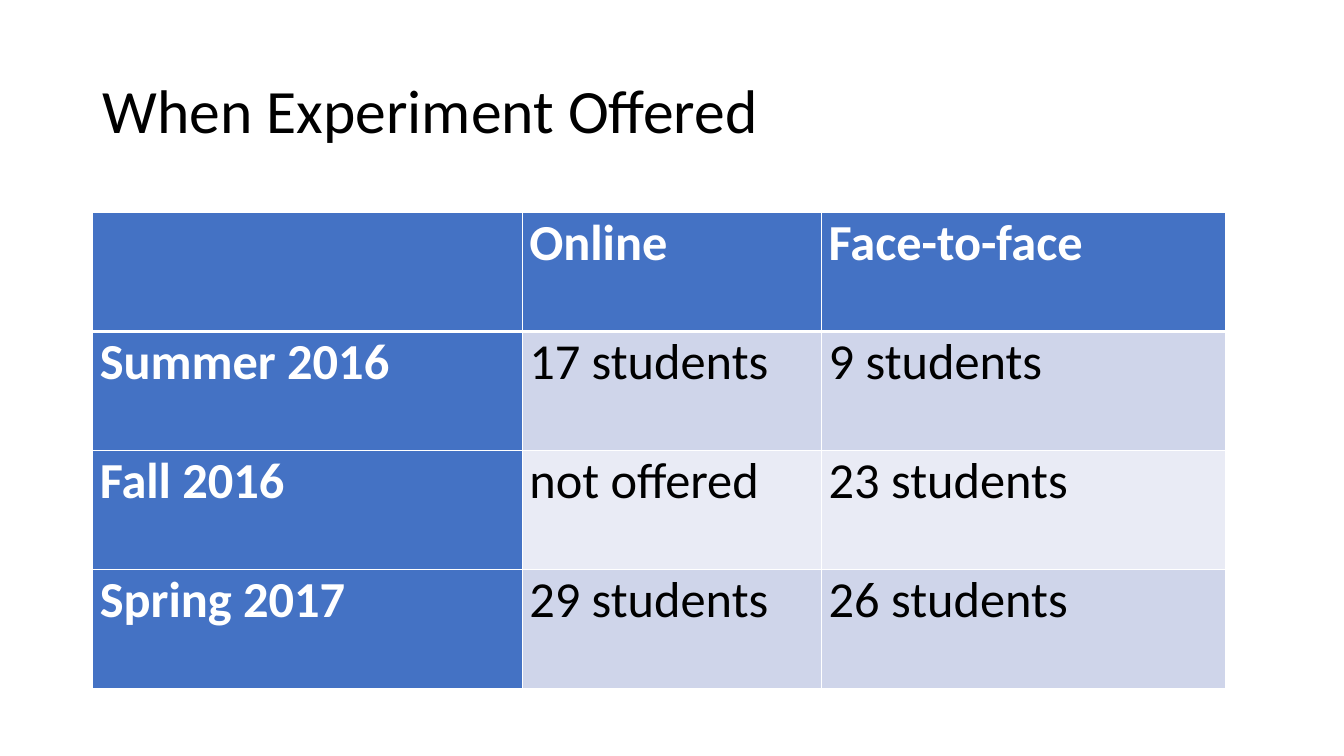
"""Build a slide with a table of when the experiment was offered."""
import pptx
import pptx.util
import pptx.dml.color
import pptx.enum.text
import pptx.oxml
import pptx.oxml.ns

THEME = {
    "font": "Calibri", "title": 44, "cell": 36, "thin": 1, "thick": 3,
    "dark": "000000", "light": "FFFFFF", "head": "4472C4",
    "bands": ["CFD5EA", "E9EBF5"],
}
ROWS = [
    ["", "Online", "Face-to-face"],
    ["Summer 2016", "17 students", "9 students"],
    ["Fall 2016", "not offered", "23 students"],
    ["Spring 2017", "29 students", "26 students"],
]
WIDTHS = [426, 297, 401]
HIGH = 118
PX = 9144
rgb = pptx.dml.color.RGBColor.from_string


def add_run(para, text, size, color, bold=False):
    run = para.add_run()
    run.text = text
    run.font.name = THEME["font"]
    run.font.size = pptx.util.Pt(size)
    run.font.bold = bold
    run.font.color.rgb = rgb(color)


def add_edge(cell, side, index, width):
    edge = pptx.oxml.parse_xml(
        f'<a:ln{side} {pptx.oxml.ns.nsdecls("a")} w="{pptx.util.Pt(width)}">'
        f'<a:solidFill><a:srgbClr val="{THEME["light"]}"/></a:solidFill>'
        f'</a:ln{side}>')
    cell._tc.get_or_add_tcPr().insert(index, edge)


deck = pptx.Presentation()
deck.slide_width = 1333 * PX
deck.slide_height = 750 * PX
slide = deck.slides.add_slide(deck.slide_layouts[6])

title = slide.shapes.add_textbox(92 * PX, 40 * PX, 1150 * PX, 145 * PX)
frame = title.text_frame
frame.word_wrap = True
frame.vertical_anchor = pptx.enum.text.MSO_ANCHOR.MIDDLE
frame.paragraphs[0].line_spacing = 0.9
add_run(frame.paragraphs[0], "When Experiment Offered", THEME["title"], THEME["dark"])

table = slide.shapes.add_table(
    len(ROWS), len(WIDTHS), 92 * PX, 211 * PX,
    sum(WIDTHS) * PX, HIGH * len(ROWS) * PX).table
table.first_col = True
for col, width in zip(table.columns, WIDTHS):
    col.width = width * PX

for r, row in enumerate(ROWS):
    table.rows[r].height = HIGH * PX
    for c, text in enumerate(row):
        cell = table.cell(r, c)
        label = r == 0 or c == 0
        cell.margin_left = cell.margin_right = 7 * PX
        cell.margin_top = cell.margin_bottom = 0
        cell.fill.solid()
        cell.fill.fore_color.rgb = rgb(THEME["head"] if label else THEME["bands"][(r - 1) % 2])
        for i, side in enumerate("LRTB"):
            thick = (r, side) in [(0, "B"), (1, "T")]
            add_edge(cell, side, i, THEME["thick" if thick else "thin"])
        if text:
            color = THEME["light" if label else "dark"]
            add_run(cell.text_frame.paragraphs[0], text, THEME["cell"], color, label)

deck.save("out.pptx")
